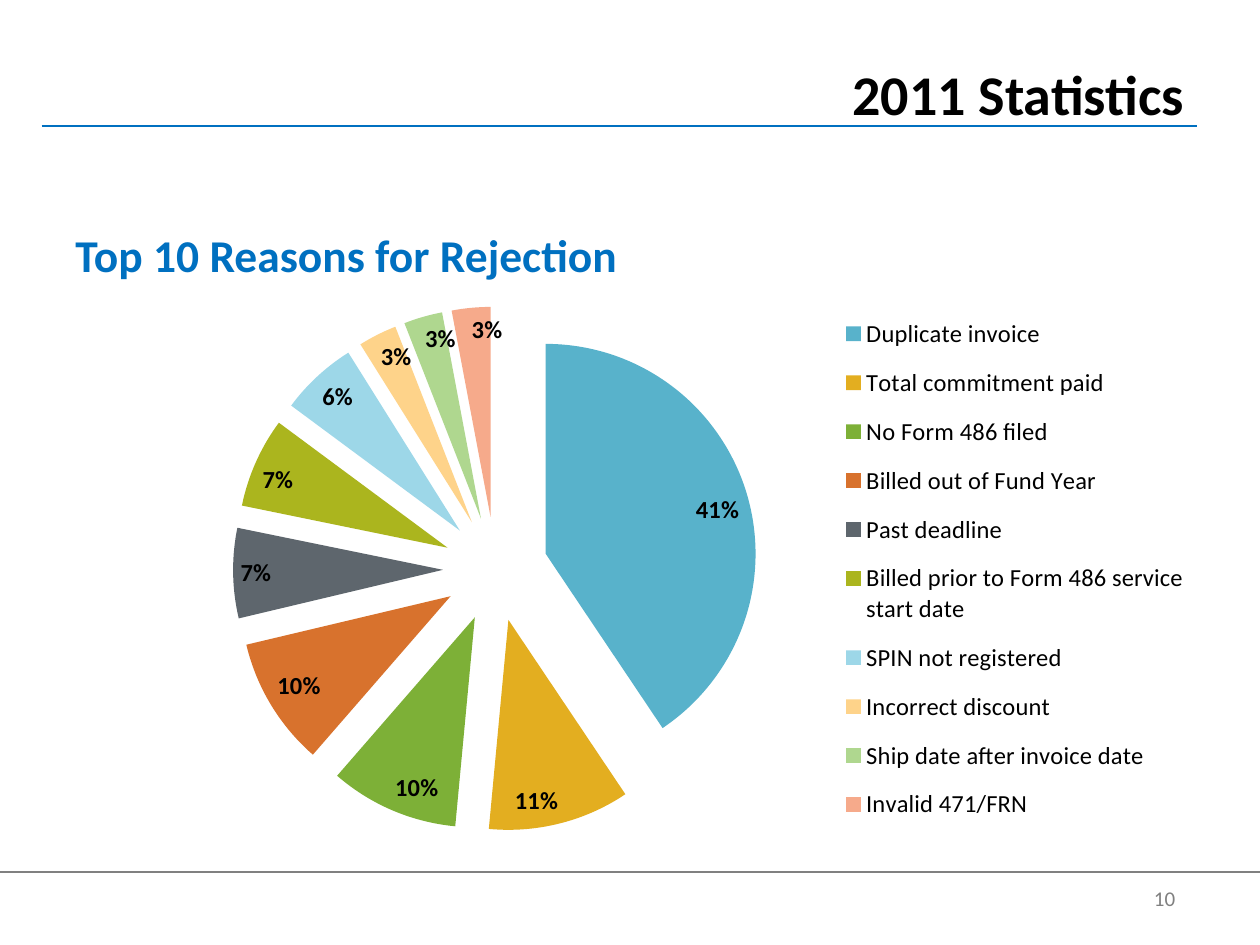
from lxml.etree import SubElement
from pptx import Presentation
from pptx.chart.data import CategoryChartData
from pptx.dml.color import RGBColor
from pptx.enum.chart import XL_CHART_TYPE as ChartType
from pptx.enum.chart import XL_LABEL_POSITION as LabelPos
from pptx.enum.chart import XL_LEGEND_POSITION as LegendPos
from pptx.enum.shapes import MSO_CONNECTOR as Connector
from pptx.enum.text import MSO_ANCHOR as Anchor
from pptx.enum.text import PP_ALIGN as Align
from pptx.oxml import parse_xml
from pptx.oxml.ns import nsdecls, qn
from pptx.util import Inches, Pt

CELL = 0.25
FONT = "Calibri"
COLORS = {"text": "000000", "accent": "0070C0", "muted": "808080"}
REASONS = [
    ("Duplicate invoice", 41, "58B2CB"),
    ("Total commitment paid", 11, "E3AE20"),
    ("No Form 486 filed", 10, "7DB037"),
    ("Billed out of Fund Year", 10, "D8722D"),
    ("Past deadline", 7, "5E666D"),
    ("Billed prior to Form 486 service start date", 7, "ABB51E"),
    ("SPIN not registered", 6, "9DD7E8"),
    ("Incorrect discount", 3, "FED38A"),
    ("Ship date after invoice date", 3, "AFD78F"),
    ("Invalid 471/FRN", 3, "F6AA8B"),
]


def grid(*cells):
    return [Inches(n * CELL) for n in cells]


def set_font(font, color, **values):
    for name, value in {"name": FONT, **values}.items():
        setattr(font, name, value)
    font.color.rgb = RGBColor.from_string(COLORS[color])


def add_text(s, box, text, color, size, bold=False, align=Align.LEFT):
    tf = s.shapes.add_textbox(*grid(*box)).text_frame
    tf.word_wrap = True
    tf.vertical_anchor = Anchor.TOP
    p = tf.paragraphs[0]
    p.alignment = align
    r = p.add_run()
    r.text = text
    set_font(r.font, color, size=Pt(size), bold=bold)


def add_rule(s, left, right, row, color, width):
    line = s.shapes.add_connector(Connector.STRAIGHT, *grid(left, row, right, row))
    line.line.color.rgb = RGBColor.from_string(COLORS[color])
    line.line.width = Pt(width)
    SubElement(line._element.spPr, qn("a:effectLst"))


def layout_xml(inner=False, **shares):
    target = '<c:layoutTarget val="inner"/>' if inner else ""
    modes = "".join(f'<c:{k}Mode val="edge"/>' for k in "xy")
    sizes = "".join(f'<c:{k} val="{v}"/>' for k, v in shares.items())
    return parse_xml(
        f'<c:layout {nsdecls("c")}><c:manualLayout>{target}{modes}{sizes}'
        "</c:manualLayout></c:layout>"
    )


def place(parent, index, layout):
    for old in parent.findall(qn("c:layout")):
        parent.remove(old)
    parent.insert(index, layout)


def add_pie(s, box):
    data = CategoryChartData()
    data.categories = [name for name, _, _ in REASONS]
    data.add_series("Series 1", [value for _, value, _ in REASONS])
    chart = s.shapes.add_chart(ChartType.PIE, *grid(*box), data).chart
    chart.has_title = False
    set_font(chart.font, "text", size=Pt(10))

    chart.has_legend = True
    legend = chart.legend
    legend.position = LegendPos.RIGHT
    legend.include_in_layout = False
    set_font(legend.font, "text", size=Pt(14))
    place(legend._element, 1, layout_xml(x=0.66, y=0.08, w=0.34, h=0.9))

    plot = chart.plots[0]
    plot.vary_by_categories = True
    place(plot._element.getparent(), 0,
          layout_xml(inner=True, x=0.1, y=0.09, w=0.49, h=0.88))
    series = plot.series[0]
    series._element.find(qn("c:tx")).addnext(
        parse_xml(f'<c:explosion {nsdecls("c")} val="25"/>'))
    for i, (_, _, color) in enumerate(REASONS):
        fill = series.points[i].format.fill
        fill.solid()
        fill.fore_color.rgb = RGBColor.from_string(color)

    plot.has_data_labels = True
    labels = plot.data_labels
    formats = {
        "show_percentage": True,
        "show_value": False,
        "number_format": "0%",
        "number_format_is_linked": False,
        "position": LabelPos.INSIDE_END,
    }
    for name, value in formats.items():
        setattr(labels, name, value)
    set_font(labels.font, "text", size=Pt(14), bold=True)


def main():
    prs = Presentation()
    prs.slide_width, prs.slide_height = grid(40, 30)
    s = prs.slides.add_slide(prs.slide_layouts[6])
    add_rule(s, 0, 40, 27.68, "muted", 0.75)
    add_rule(s, 1.32, 38, 4, "accent", 1.25)
    add_pie(s, (4, 8, 34, 19))
    add_text(s, (2, 7, 36, 2.68), "Top 10 Reasons for Rejection", "accent", 26, True)
    add_text(s, (22, 1.68, 16, 2.32), "2011 Statistics", "text", 32, True, Align.RIGHT)
    add_text(s, (33, 27.9, 4.7, 1.4), "10", "muted", 12, align=Align.RIGHT)
    prs.save("out.pptx")


if __name__ == "__main__":
    main()
